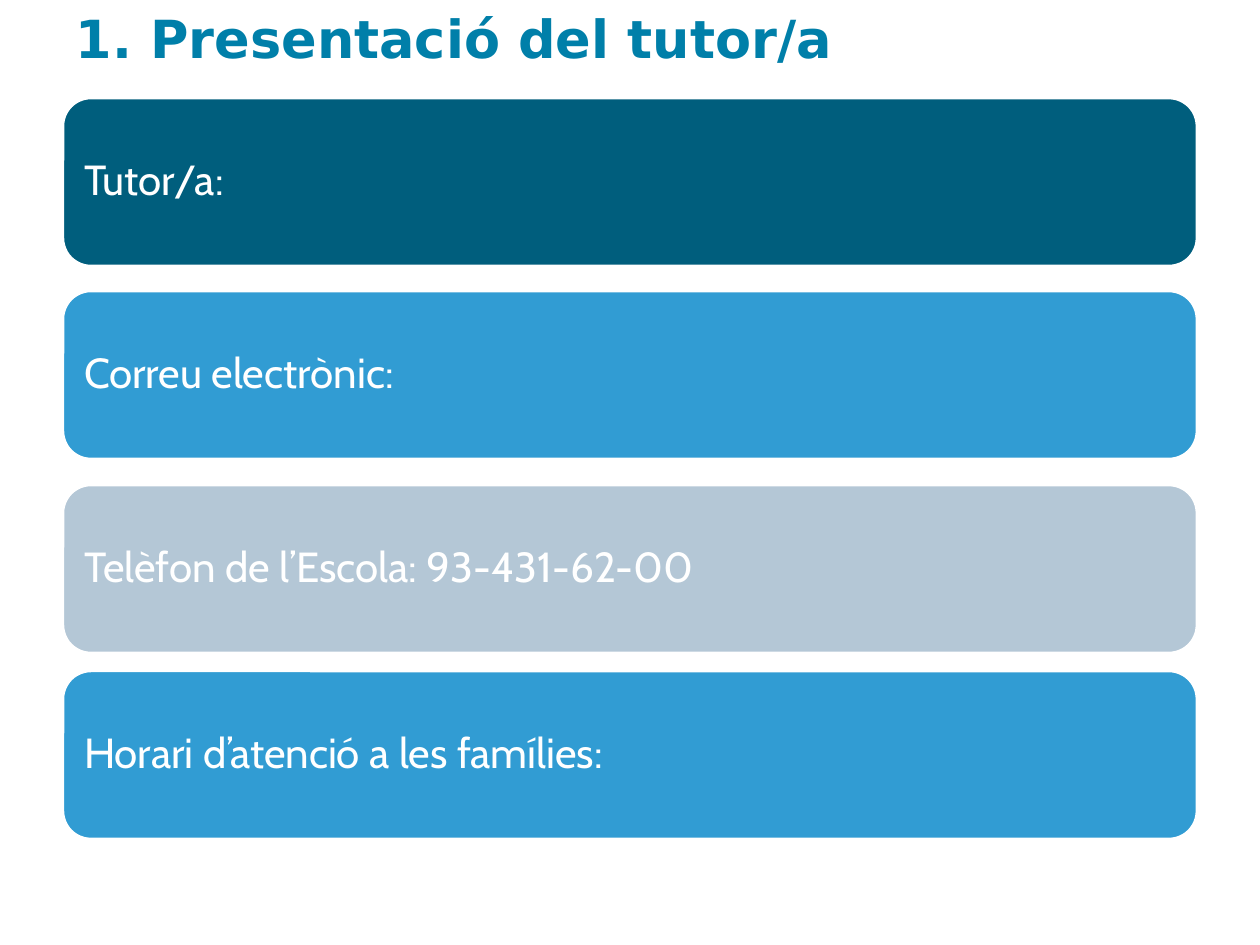
from pptx import Presentation
from pptx.dml.color import RGBColor
from pptx.enum.shapes import MSO_SHAPE
from pptx.enum.text import MSO_ANCHOR, PP_ALIGN
from pptx.util import Pt

PX = 914400 // 126


def rgb(value):
    return RGBColor.from_string(value)


def write(s, text, anchor, color, margins, fonts):
    tf = s.text_frame
    tf.word_wrap = True
    tf.vertical_anchor = anchor
    for side, value in margins.items():
        setattr(tf, "margin_" + side, value * PX)
    p = tf.paragraphs[0]
    p.alignment = PP_ALIGN.LEFT
    r = p.add_run()
    r.text = text
    for name, value in fonts.items():
        setattr(r.font, name, value)
    r.font.color.rgb = rgb(color)
    return p


prs = Presentation()
prs.slide_width = 1260 * PX
prs.slide_height = 945 * PX
slide = prs.slides.add_slide(prs.slide_layouts[6])

left, width, height = 63, 1134, 168
cards = [
    (98, "005E7D", "Tutor/a:"),
    (291, "319CD3", "Correu electrònic:"),
    (485, "B4C7D6", "Telèfon de l’Escola: 93-431-62-00"),
    (671, "319CD3", "Horari d’atenció a les famílies:"),
]
card_margins = dict.fromkeys(("left", "top", "right", "bottom"), 13)
card_font = {"name": "Cabin", "size": Pt(24), "bold": False}

for top, fill, text in cards:
    s = slide.shapes.add_shape(MSO_SHAPE.ROUNDED_RECTANGLE,
                               left * PX, top * PX, width * PX, height * PX)
    s.shadow.inherit = False
    s.fill.solid()
    s.fill.fore_color.rgb = rgb(fill)
    s.line.color.rgb = rgb("FFFFFF")
    s.line.width = Pt(1.5)
    p = write(s, text, MSO_ANCHOR.MIDDLE, "FFFFFF", card_margins, card_font)
    p.line_spacing = 0.9

title = slide.shapes.add_textbox(left * PX, 11 * PX, width * PX, 64 * PX)
write(title, "1. Presentació del tutor/a", MSO_ANCHOR.BOTTOM, "007FA9",
      {"left": 13, "top": 6, "right": 13, "bottom": 6},
      {"name": "DejaVu Sans", "size": Pt(30), "bold": True})

prs.save("out.pptx")
